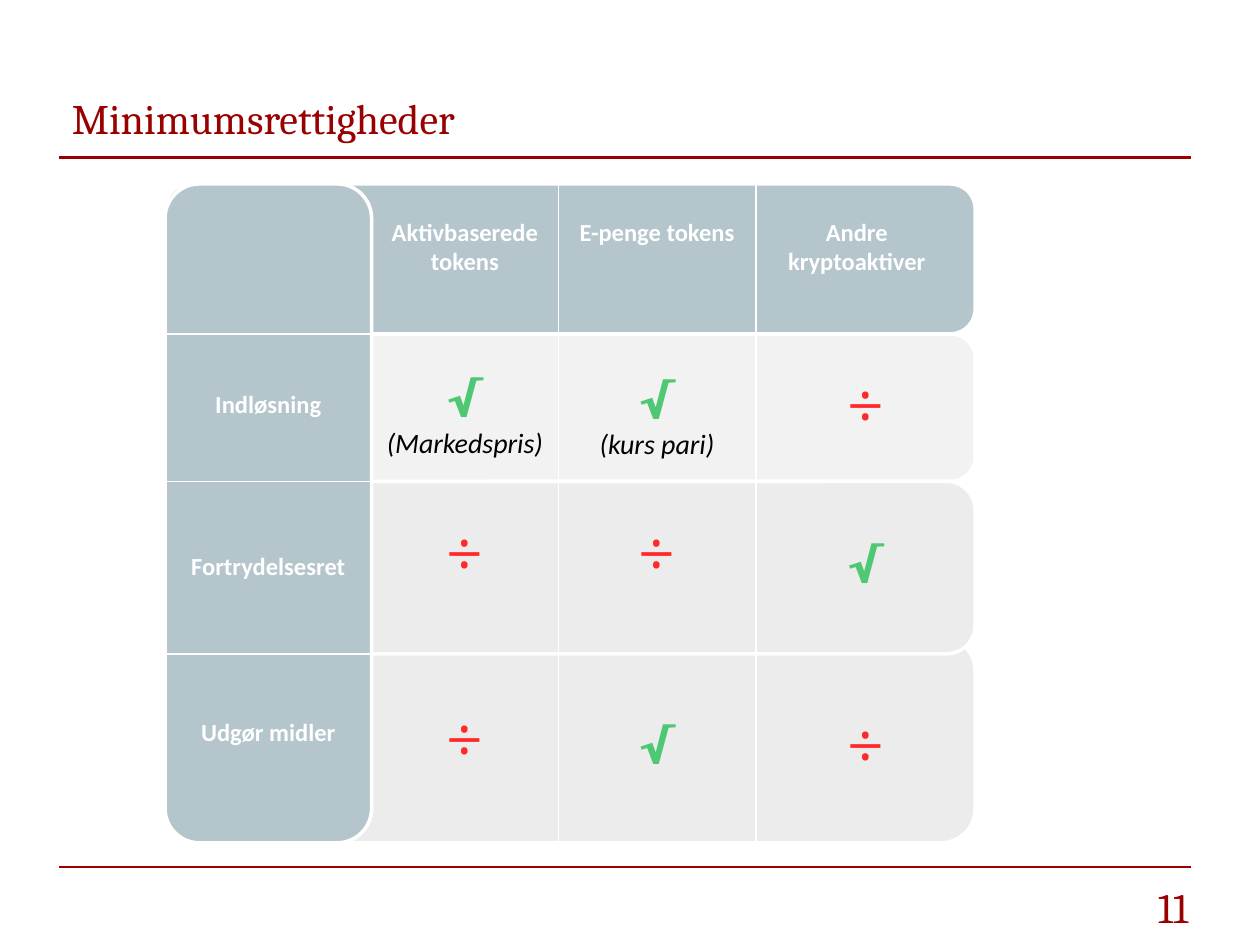
from pptx import Presentation
from pptx.dml.color import RGBColor
from pptx.enum.shapes import MSO_CONNECTOR, MSO_SHAPE
from pptx.enum.text import MSO_ANCHOR, PP_ALIGN
from pptx.oxml.xmlchemy import OxmlElement
from pptx.util import Inches, Pt

RED = RGBColor(0x99, 0x00, 0x00)
WHITE = RGBColor(0xFF, 0xFF, 0xFF)
BLACK = RGBColor(0x00, 0x00, 0x00)
BLUE = RGBColor(0xB4, 0xC6, 0xCC)
PALE = RGBColor(0xF2, 0xF2, 0xF2)
GREY = RGBColor(0xEC, 0xEC, 0xEC)
GREEN = RGBColor(0x4F, 0xC8, 0x74)
BRIGHT = RGBColor(0xFF, 0x29, 0x29)

COLS = (1.31, 2.95, 4.43, 6, 7.74)
ROWS = (1.46, 2.65, 3.82, 5.19, 6.69)
RULE = (0.47, 9.45)


class Deck:
    """Draw the parts of a rights matrix on one slide, placed by grid column and row."""

    def __init__(self):
        self.deck = Presentation()
        self.deck.slide_width, self.deck.slide_height = Inches(10), Inches(7.5)
        self.slide = self.deck.slides.add_slide(self.deck.slide_layouts[5])

    def edge(self, marks, spot):
        low = min(int(spot), len(marks) - 2)
        return marks[low] + (spot - low) * (marks[low + 1] - marks[low])

    def run(self, para, text, size, color, face="Cambria", bold=False, italic=False):
        run = para.add_run()
        run.text = text
        font = run.font
        font.name, font.size, font.bold, font.italic = face, Pt(size), bold, italic
        font.color.rgb = color

    def title(self, text):
        head = self.slide.shapes.title
        head.left, head.top, head.width, head.height = map(Inches, (0.47, 0.59, 9, 0.69))
        head.text_frame.vertical_anchor = MSO_ANCHOR.MIDDLE
        para = head.text_frame.paragraphs[0]
        para.alignment = PP_ALIGN.LEFT
        self.run(para, text, 24, RED)

    def line(self, x1, y1, x2, y2, color=WHITE, width=0.75):
        line = self.slide.shapes.add_connector(
            MSO_CONNECTOR.STRAIGHT, *map(Inches, (x1, y1, x2, y2)))
        line.line.color.rgb = color
        line.line.width = Pt(width)
        line._element.spPr.append(OxmlElement("a:effectLst"))

    def panel(self, left, top, right, bottom, fill):
        x1, x2 = (self.edge(COLS, col) for col in (left, right))
        y1, y2 = (self.edge(ROWS, row) for row in (top, bottom))
        panel = self.slide.shapes.add_shape(
            MSO_SHAPE.ROUNDED_RECTANGLE, *map(Inches, (x1, y1, x2 - x1, y2 - y1)))
        panel.shadow.inherit = False
        panel.fill.solid()
        panel.fill.fore_color.rgb = fill
        panel.line.color.rgb = WHITE
        panel.line.width = Pt(2)

    def box(self, x, y, width, height, align=PP_ALIGN.CENTER):
        box = self.slide.shapes.add_textbox(*map(Inches, (x, y, width, height)))
        box.text_frame.word_wrap = True
        box.text_frame.paragraphs[0].alignment = align
        return box.text_frame

    def cell(self, col, row, height, share=1):
        x = COLS[int(col)]
        width = (COLS[int(col) + 1] - x) * share
        return self.box(x, self.edge(ROWS, row), width, height)

    def label(self, col, row, text, height=0.34, share=1):
        frame = self.cell(col, row, height, share)
        self.run(frame.paragraphs[0], text, 14, WHITE, "Calibri", bold=True)

    def check(self, col, row, note=None):
        frame = self.cell(col, row, 0.86)
        self.run(frame.paragraphs[0], "√", 28, GREEN, bold=True)
        if note:
            para = frame.add_paragraph()
            para.alignment = PP_ALIGN.CENTER
            self.run(para, note, 16, BLACK, "Calibri", italic=True)

    def cross(self, col, row):
        self.run(self.cell(col, row, 0.77).paragraphs[0], "÷", 40, BRIGHT)

    def number(self, text):
        frame = self.box(0.47, 6.95, 9.06, 0.47, PP_ALIGN.RIGHT)
        self.run(frame.paragraphs[0], text, 24, RED)


def main():
    deck = Deck()
    deck.title("Minimumsrettigheder")
    for y in (1.25, 6.88):
        deck.line(RULE[0], y, RULE[1], y, RED, 1.25)

    deck.panel(0.05, 2.9, 4, 4, GREY)
    deck.panel(0.05, 2, 4, 3, GREY)
    deck.panel(0.05, 1, 4, 2, PALE)
    deck.panel(0, 0, 4, 1, BLUE)
    deck.panel(0, 0, 1, 4, BLUE)
    for y in ROWS[1:-1]:
        deck.line(COLS[0], y, COLS[1], y)
    for x in COLS[2:]:
        deck.line(x, ROWS[0], x, ROWS[-1])

    deck.label(1, 0.18, "Aktivbaserede tokens", 0.57)
    deck.label(2, 0.18, "E-penge tokens")
    deck.label(3, 0.18, "Andre kryptoaktiver", 0.57, 0.92)
    for row, text in ((1.33, "Indløsning"), (2.37, "Fortrydelsesret"), (3.3, "Udgør midler")):
        deck.label(0, row, text)

    deck.check(1, 1.18, "(Markedspris)")
    deck.check(2, 1.19, "(kurs pari)")
    deck.check(3, 2.26)
    deck.check(2, 3.28)
    for col, row in ((3, 1.11), (1, 2.1), (2, 2.1), (1, 3.16), (3, 3.19)):
        deck.cross(col, row)

    deck.number("11")
    deck.deck.save("out.pptx")


if __name__ == "__main__":
    main()
